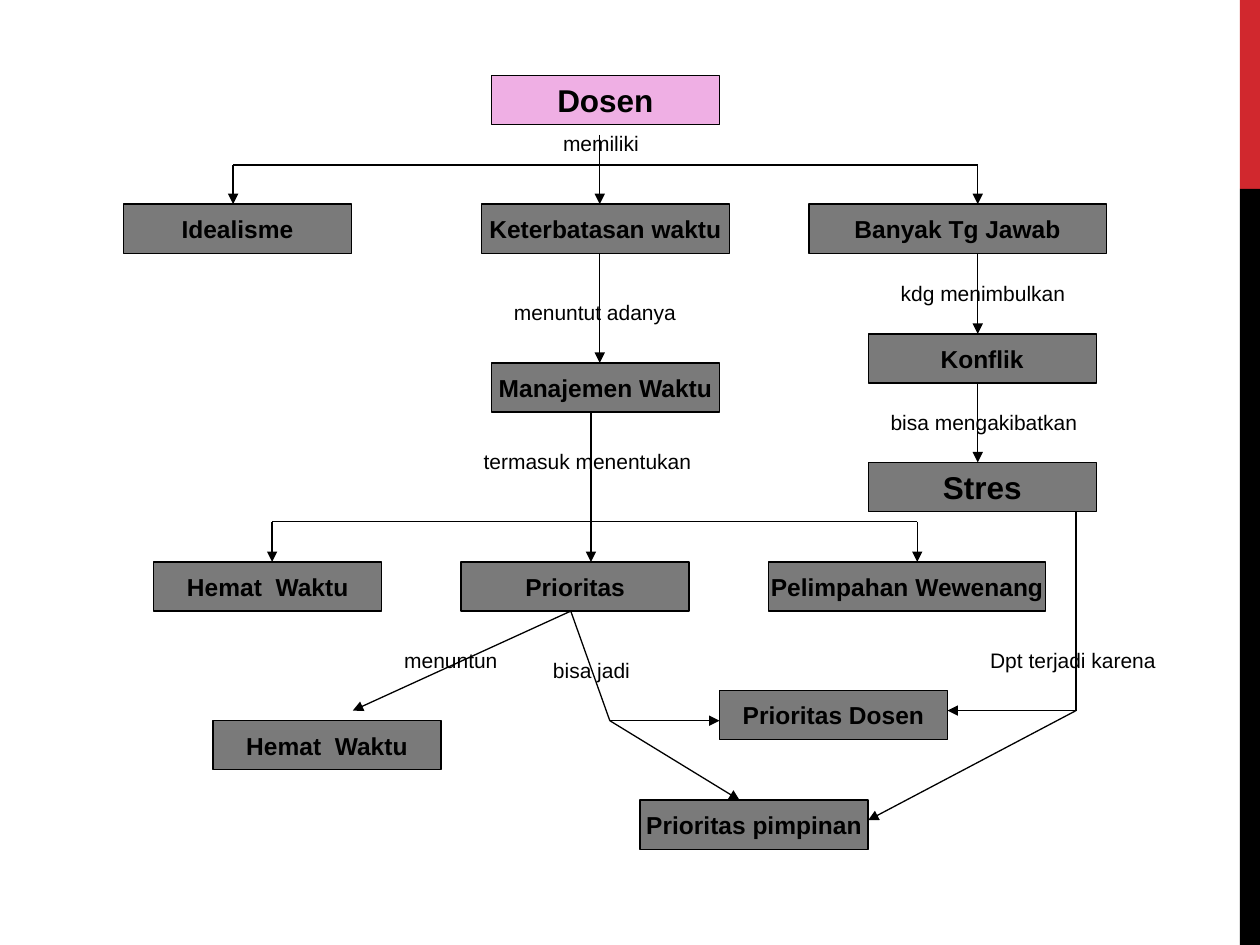
from lxml.etree import SubElement
from pptx import Presentation
from pptx.dml.color import RGBColor
from pptx.enum.shapes import MSO_CONNECTOR as Connector, MSO_SHAPE as Shape
from pptx.enum.text import MSO_ANCHOR as Anchor, MSO_AUTO_SIZE as AutoSize, PP_ALIGN as Align
from pptx.oxml.ns import qn
from pptx.util import Inches, Pt

COLORS = {"ink": "000000", "gray": "7A7A7A", "pink": "EFAFE4", "red": "D1282E"}
BOX_WIDTH, BOX_HEIGHT = 1.81, 0.39

BOXES = [
    ("Idealisme", 0.98, 1.62, BOX_WIDTH),
    ("Manajemen Waktu", 3.9, 2.88, BOX_WIDTH),
    ("Banyak Tg Jawab", 6.42, 1.62, 2.36),
    ("Keterbatasan waktu", 3.82, 1.62, 1.97),
    ("Konflik", 6.89, 2.65, BOX_WIDTH),
    ("Hemat  Waktu", 1.22, 4.46, BOX_WIDTH),
    ("Prioritas", 3.66, 4.46, BOX_WIDTH),
    ("Pelimpahan Wewenang", 6.1, 4.46, 2.2),
    ("Prioritas pimpinan", 5.08, 6.35, BOX_WIDTH),
    ("Prioritas Dosen", 5.71, 5.48, BOX_WIDTH),
    ("Hemat  Waktu", 1.69, 5.72, BOX_WIDTH),
]
LINES = [
    (1.85, 1.31, 7.76, 1.31),
    (2.16, 4.14, 7.28, 4.14),
    (4.53, 4.85, 4.84, 5.72),
    (8.54, 4.06, 8.54, 5.64),
]
ARROWS = [
    (4.76, 1.07, 4.76, 1.62),
    (1.85, 1.31, 1.85, 1.62),
    (7.76, 1.31, 7.76, 1.62),
    (4.76, 2.02, 4.76, 2.88),
    (7.76, 2.02, 7.76, 2.65),
    (7.76, 3.04, 7.76, 3.67),
    (4.69, 3.28, 4.69, 4.46),
    (2.16, 4.14, 2.16, 4.46),
    (7.28, 4.14, 7.28, 4.46),
    (4.53, 4.85, 2.8, 5.64),
    (4.84, 5.72, 5.71, 5.72),
    (4.84, 5.72, 5.87, 6.35),
    (8.54, 5.64, 7.52, 5.64),
    (8.54, 5.64, 6.89, 6.51),
]
LABELS = [
    ("memiliki", 4.37, 0.99, 0.95),
    ("menuntut adanya", 3.98, 2.33, 1.5),
    ("kdg menimbulkan", 7.05, 2.18, 1.65),
    ("bisa mengakibatkan", 6.97, 3.2, 1.73),
    ("termasuk menentukan", 3.74, 3.51, 2.05),
    ("menuntun", 3.11, 5.09, 1.34),
    ("bisa jadi", 4.29, 5.17, 1.02),
    ("Dpt terjadi karena", 7.76, 5.09, 1.65),
]


class ConceptMap:
    """Draws the boxes, links and labels of a concept map on one page."""

    def __init__(self, page, font="Arial", line_width=0.75):
        self.page = page
        self.font = font
        self.line_width = Pt(line_width)

    def color(self, name):
        return RGBColor.from_string(COLORS[name])

    def fill_text(self, frame, text, size, bold=False):
        frame.text = text
        span = frame.paragraphs[0].runs[0]
        span.font.name = self.font
        span.font.size = Pt(size)
        span.font.bold = bold
        span.font.color.rgb = self.color("ink")

    def bar(self, left, top, width, height, fill):
        bar = self.page.shapes.add_shape(
            Shape.RECTANGLE, Inches(left), Inches(top), Inches(width), Inches(height))
        bar.shadow.inherit = False
        bar.fill.solid()
        bar.fill.fore_color.rgb = self.color(fill)
        bar.line.fill.background()
        return bar

    def box(self, text, left, top, width=BOX_WIDTH, fill="gray", size=14):
        box = self.bar(left, top, width, BOX_HEIGHT, fill)
        box.line.color.rgb = self.color("ink")
        box.line.width = self.line_width
        frame = box.text_frame
        frame.word_wrap = False
        frame.vertical_anchor = Anchor.MIDDLE
        self.fill_text(frame, text, size, bold=True)
        frame.paragraphs[0].alignment = Align.CENTER

    def link(self, start_x, start_y, end_x, end_y, arrow=False):
        link = self.page.shapes.add_connector(
            Connector.STRAIGHT, Inches(start_x), Inches(start_y), Inches(end_x), Inches(end_y))
        link.line.color.rgb = self.color("ink")
        link.line.width = self.line_width
        properties = link.element.spPr
        if arrow:
            SubElement(properties.find(qn("a:ln")), qn("a:tailEnd"), type="triangle")
        SubElement(properties, qn("a:effectLst"))

    def label(self, text, left, top, width):
        label = self.page.shapes.add_textbox(
            Inches(left), Inches(top), Inches(width), Inches(0.3))
        frame = label.text_frame
        frame.word_wrap = True
        frame.auto_size = AutoSize.SHAPE_TO_FIT_TEXT
        self.fill_text(frame, text, 12)


def main():
    deck = Presentation()
    deck.slide_width, deck.slide_height = Inches(10), Inches(7.5)
    concept_map = ConceptMap(deck.slides.add_slide(deck.slide_layouts[6]))
    concept_map.bar(9.84, 0, 0.16, 1.5, "red")
    concept_map.bar(9.84, 1.5, 0.16, 6, "ink")
    concept_map.box("Dosen", 3.9, 0.6, fill="pink", size=18)
    concept_map.box("Stres", 6.89, 3.67, size=18)
    for box in BOXES:
        concept_map.box(*box)
    for line in LINES:
        concept_map.link(*line)
    for arrow in ARROWS:
        concept_map.link(*arrow, arrow=True)
    for label in LABELS:
        concept_map.label(*label)
    deck.save("out.pptx")


if __name__ == "__main__":
    main()
